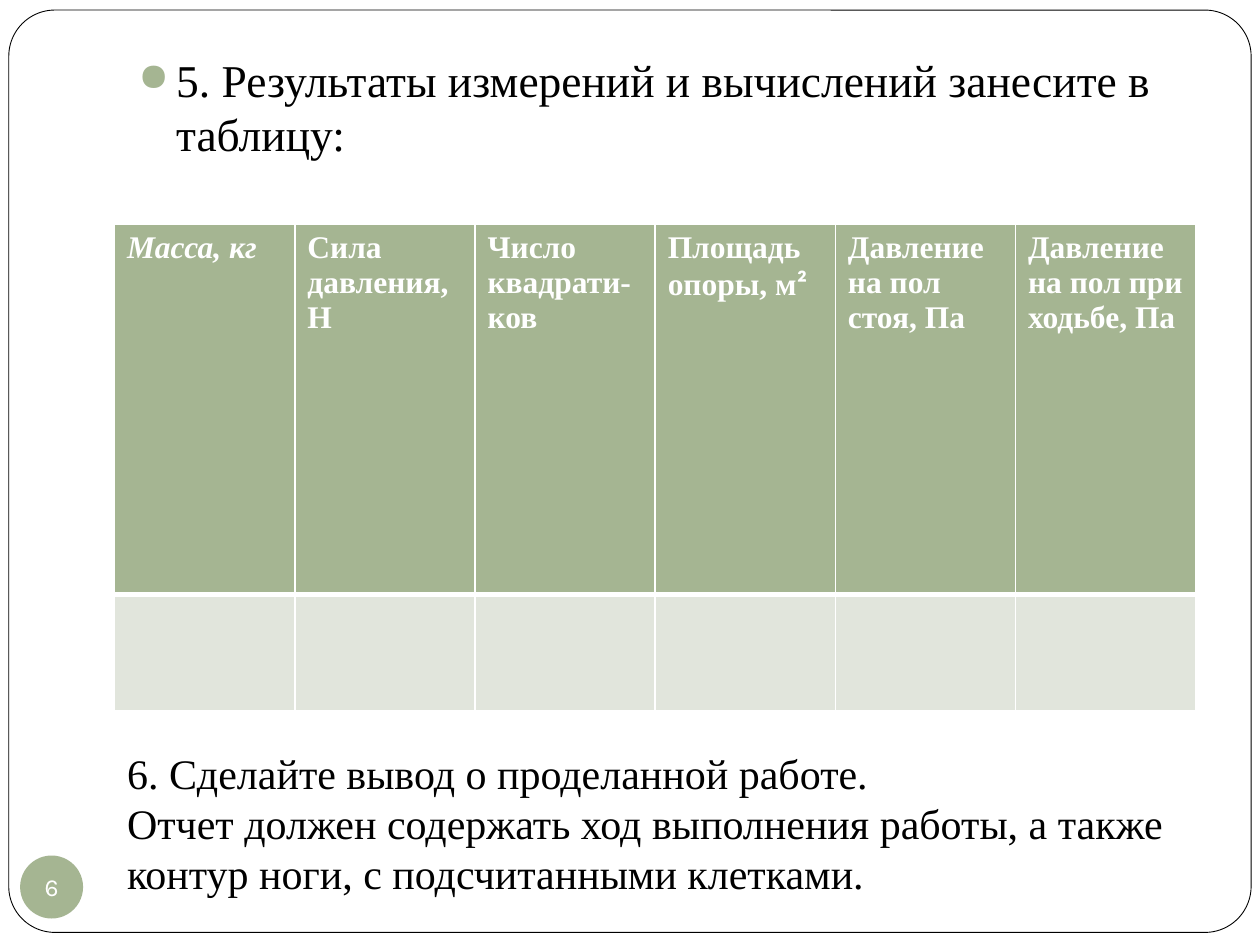
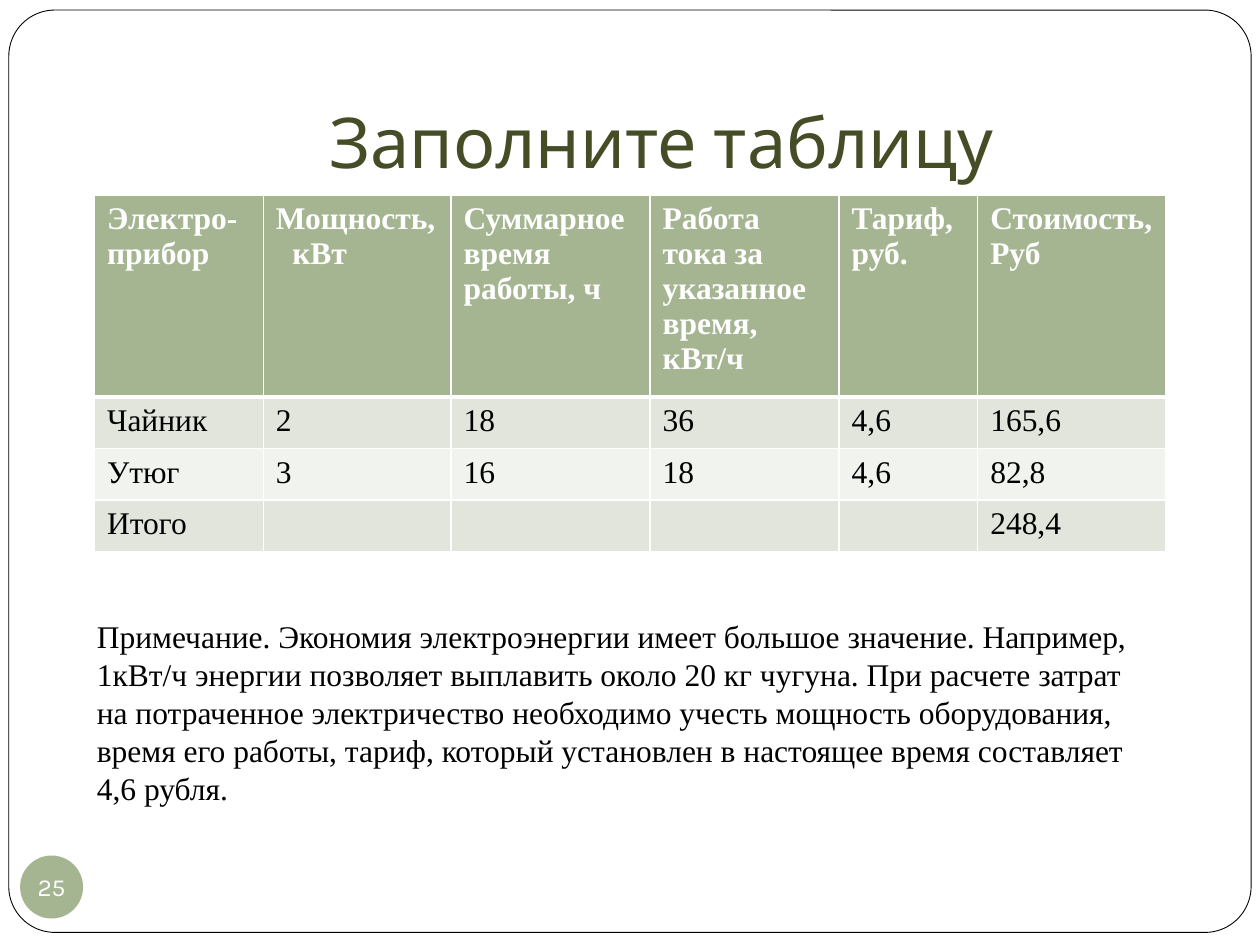
"""Builds two lesson slides, each with a table and a note."""
from dataclasses import dataclass

from lxml.etree import SubElement
from pptx import Presentation
from pptx.dml.color import RGBColor
from pptx.enum.shapes import MSO_SHAPE as Preset
from pptx.enum.text import MSO_ANCHOR as Anchor, PP_ALIGN as Align
from pptx.oxml.ns import qn
from pptx.util import Pt

PX = 9144


@dataclass(frozen=True)
class Theme:
    accent: str = "A5B592"
    title: str = "444D26"
    ink: str = "000000"
    paper: str = "FFFFFF"
    bands: tuple = ("E1E5DC", "F0F3EE")
    serif: str = "Times New Roman"
    sans: str = "Karla"
    superscript: str = "Calibri"
    title_size: int = 40
    task_size: int = 26
    note_size: int = 24
    small_size: int = 18
    number_size: int = 14


THEME = Theme()
SLIDE_SIZE = (1000, 750)
FRAME = (7, 8, 986, 732)
BADGE = (16, 679, 50, 50)
HANGING = 13

MEASUREMENTS = {
    "number": "6",
    "task": ((100, 36, 850, 122), "5. Результаты измерений и вычислений занесите в таблицу:"),
    "table": {
        "at": (91, 178),
        "columns": [143] * 6,
        "rows": [294, 92],
        "header": [
            ["Масса, кг"],
            ["Сила", "давления,", "Н"],
            ["Число", "квадрати-ков"],
            ["Площадь", "опоры, м²"],
            ["Давление", "на пол", "стоя, Па"],
            ["Давление", "на пол при", "ходьбе, Па"],
        ],
        "italic": "Масса, кг",
        "body": [[""] * 6],
    },
    "note": ((91, 588, 858, 131), THEME.note_size, [
        "6. Сделайте вывод о проделанной работе.",
        "Отчет должен содержать ход выполнения работы, а также контур ноги, "
        "с подсчитанными клетками.",
    ]),
}

ELECTRICITY = {
    "number": "25",
    "title": ((100, 30, 850, 125), "Заполните таблицу"),
    "table": {
        "at": (75, 155),
        "columns": [134, 149, 158, 150, 110, 149],
        "rows": [147, 41, 41, 41],
        "header": [
            ["Электро-прибор"],
            ["Мощность, кВт"],
            ["Суммарное время работы, ч"],
            ["Работа тока за указанное время, кВт/ч"],
            ["Тариф, руб."],
            ["Стоимость, Руб"],
        ],
        "hanging": "Мощность, кВт",
        "body": [
            ["Чайник", "2", "18", "36", "4,6", "165,6"],
            ["Утюг", "3", "16", "18", "4,6", "82,8"],
            ["Итого", "", "", "", "", "248,4"],
        ],
    },
    "note": ((67, 485, 858, 162), THEME.small_size, [
        "Примечание. Экономия электроэнергии имеет большое значение. Например, "
        "1кВт/ч энергии позволяет выплавить около 20 кг чугуна. При расчете затрат "
        "на потраченное электричество необходимо учесть мощность оборудования, "
        "время его работы, тариф, который установлен в настоящее время составляет "
        "4,6 рубля.",
    ]),
}


def scaled(lengths):
    return [length * PX for length in lengths]


def color(code):
    return RGBColor.from_string(code)


def add_run(paragraph, text, size, code=THEME.ink, name=THEME.serif, bold=False, italic=False):
    run = paragraph.add_run()
    run.text = text
    font = run.font
    font.name, font.size, font.bold, font.italic = name, Pt(size), bold, italic
    font.color.rgb = color(code)


def paragraphs_for(text_frame, lines):
    for index, line in enumerate(lines):
        yield (text_frame.add_paragraph() if index else text_frame.paragraphs[0]), line


def hang(paragraph, width):
    properties = paragraph._p.get_or_add_pPr()
    properties.set("marL", str(width * PX))
    properties.set("indent", str(-width * PX))
    return properties


def add_preset(slide, preset, box, fill, line=None):
    shape = slide.shapes.add_shape(preset, *scaled(box))
    shape.shadow.inherit = False
    shape.fill.solid()
    shape.fill.fore_color.rgb = color(fill)
    if line:
        shape.line.color.rgb = color(line)
        shape.line.width = Pt(0.5)
    else:
        shape.line.fill.background()
    return shape


def add_text_box(slide, box):
    text_frame = slide.shapes.add_textbox(*scaled(box)).text_frame
    text_frame.word_wrap = True
    return text_frame


def add_frame(slide):
    frame = add_preset(slide, Preset.ROUNDED_RECTANGLE, FRAME, THEME.paper, THEME.ink)
    frame.adjustments[0] = 0.05


def add_badge(slide, number):
    text_frame = add_preset(slide, Preset.OVAL, BADGE, THEME.accent).text_frame
    text_frame.margin_left = text_frame.margin_right = 0
    text_frame.margin_top = text_frame.margin_bottom = 0
    text_frame.word_wrap = False
    text_frame.vertical_anchor = Anchor.MIDDLE
    paragraph = text_frame.paragraphs[0]
    paragraph.alignment = Align.CENTER
    add_run(paragraph, number, THEME.number_size, THEME.paper, THEME.sans)


def add_title(slide, box, text):
    text_frame = add_text_box(slide, box)
    text_frame.margin_bottom = 10 * PX
    text_frame.vertical_anchor = Anchor.BOTTOM
    paragraph = text_frame.paragraphs[0]
    paragraph.alignment = Align.CENTER
    add_run(paragraph, text, THEME.title_size, THEME.title, THEME.sans)


def add_task(slide, box, text):
    paragraph = add_text_box(slide, box).paragraphs[0]
    paragraph.space_before = Pt(5.8)
    properties = hang(paragraph, 30)
    bullet_color = SubElement(properties, qn("a:buClr"))
    SubElement(bullet_color, qn("a:srgbClr"), val=THEME.accent)
    SubElement(properties, qn("a:buSzPct"), val="85000")
    SubElement(properties, qn("a:buChar"), char="●")
    add_run(paragraph, text, THEME.task_size)


def add_note(slide, box, size, lines):
    for paragraph, line in paragraphs_for(add_text_box(slide, box), lines):
        add_run(paragraph, line, size)


def paint_cell(cell, fill, bottom_width):
    properties = cell._tc.get_or_add_tcPr()
    for side, width in (("L", 1), ("R", 1), ("T", 1), ("B", bottom_width)):
        border = SubElement(properties, qn(f"a:ln{side}"), w=str(Pt(width)))
        solid = SubElement(border, qn("a:solidFill"))
        SubElement(solid, qn("a:srgbClr"), val=THEME.paper)
    cell.fill.solid()
    cell.fill.fore_color.rgb = color(fill)


def fill_header(cell, lines, content):
    paint_cell(cell, THEME.accent, 3)
    for paragraph, line in paragraphs_for(cell.text_frame, lines):
        if line == content.get("hanging"):
            hang(paragraph, HANGING)
        base, square, _ = line.partition("²")
        for text, name in ((base, THEME.serif), (square, THEME.superscript)):
            if text:
                add_run(paragraph, text, THEME.small_size, THEME.paper, name,
                        bold=True, italic=line == content.get("italic"))


def add_table(slide, content):
    columns, rows = content["columns"], content["rows"]
    box = (*content["at"], sum(columns), sum(rows))
    table = slide.shapes.add_table(len(rows), len(columns), *scaled(box)).table
    table.horz_banding = False
    for column, width in zip(table.columns, scaled(columns)):
        column.width = width
    for row, height in zip(table.rows, scaled(rows)):
        row.height = height
    for index, lines in enumerate(content["header"]):
        fill_header(table.cell(0, index), lines, content)
    for row_index, values in enumerate(content["body"]):
        for column_index, value in enumerate(values):
            cell = table.cell(row_index + 1, column_index)
            paint_cell(cell, THEME.bands[row_index % 2], 1)
            if value:
                add_run(cell.text_frame.paragraphs[0], value, THEME.small_size)


def add_slide(presentation, content):
    slide = presentation.slides.add_slide(presentation.slide_layouts[6])
    add_frame(slide)
    if "title" in content:
        add_title(slide, *content["title"])
    if "task" in content:
        add_task(slide, *content["task"])
    add_table(slide, content["table"])
    add_note(slide, *content["note"])
    add_badge(slide, content["number"])


def main():
    presentation = Presentation()
    presentation.slide_width, presentation.slide_height = scaled(SLIDE_SIZE)
    for content in (MEASUREMENTS, ELECTRICITY):
        add_slide(presentation, content)
    presentation.save("out.pptx")


if __name__ == "__main__":
    main()
